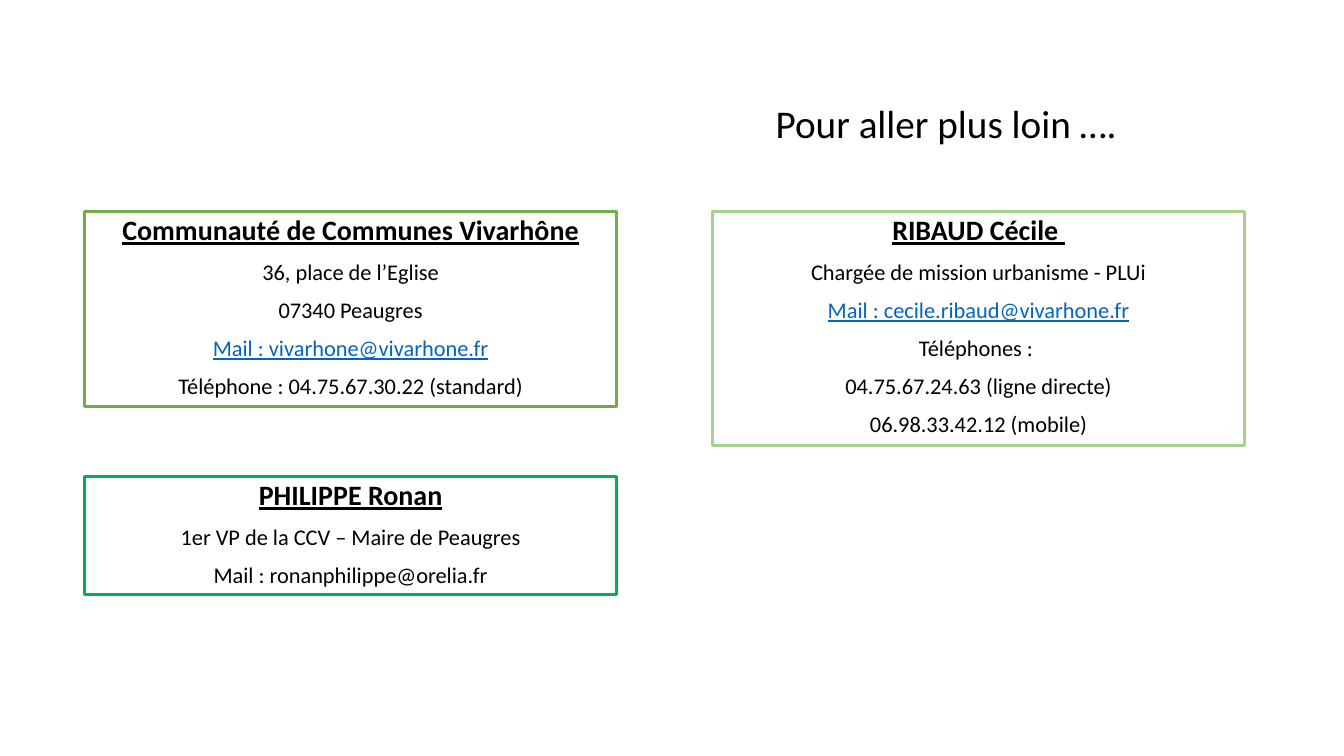
from pptx import Presentation
from pptx.dml.color import RGBColor
from pptx.enum.shapes import MSO_SHAPE
from pptx.enum.text import MSO_ANCHOR, PP_ALIGN
from pptx.util import Pt

RECTANGLE = MSO_SHAPE.RECTANGLE
TOP = MSO_ANCHOR.TOP
CENTER = PP_ALIGN.CENTER

FONT = "Calibri"
BLACK, WHITE, LINK_BLUE = "000000", "FFFFFF", "0563C1"
LEFT_COLUMN, RIGHT_COLUMN = 60.5, 509
CARD_WIDTH = 380
FIRST_ROW, SECOND_ROW = 151.2, 340.5

# Left, top, height, border colour, name, details, position of the blue line
CARDS = [
    (RIGHT_COLUMN, FIRST_ROW, 167, "A9D18E", "RIBAUD Cécile ",
     ["Chargée de mission urbanisme - PLUi",
      "Mail : cecile.ribaud@vivarhone.fr",
      "Téléphones : ",
      "04.75.67.24.63 (ligne directe)",
      "06.98.33.42.12 (mobile)"], 1),
    (LEFT_COLUMN, FIRST_ROW, 139.3, "70AD47", "Communauté de Communes Vivarhône",
     ["36, place de l’Eglise",
      "07340 Peaugres",
      "Mail : vivarhone@vivarhone.fr",
      "Téléphone : 04.75.67.30.22 (standard)"], 2),
    (LEFT_COLUMN, SECOND_ROW, 84.3, "00B050", "PHILIPPE Ronan",
     ["1er VP de la CCV – Maire de Peaugres",
      "Mail : ronanphilippe@orelia.fr"], None),
]


def color(value):
    return RGBColor.from_string(value)


def write_line(paragraph, text, size, text_color=BLACK, bold=False, underline=False):
    paragraph.text = text
    paragraph.alignment = CENTER
    paragraph.line_spacing = 0.9
    font = paragraph.font
    font.name, font.size = FONT, Pt(size)
    font.bold, font.underline = bold, underline
    font.color.rgb = color(text_color)


def add_title(slide, text):
    title = slide.shapes.add_textbox(Pt(469), Pt(71.3), Pt(420), Pt(57.6))
    title.text_frame.word_wrap = True
    write_line(title.text_frame.paragraphs[0], text, 28)


def add_contact_card(slide, left, top, height, border, name, details, link_index):
    card = slide.shapes.add_shape(
        RECTANGLE, Pt(left), Pt(top), Pt(CARD_WIDTH), Pt(height))
    card.shadow.inherit = False
    card.fill.solid()
    card.fill.fore_color.rgb = color(WHITE)
    card.line.color.rgb = color(border)
    card.line.width = Pt(2)

    frame = card.text_frame
    frame.word_wrap = True
    frame.vertical_anchor = TOP
    write_line(frame.paragraphs[0], name, 20, bold=True, underline=True)
    for index, detail in enumerate(details):
        is_link = index == link_index
        paragraph = frame.add_paragraph()
        write_line(paragraph, detail, 16, LINK_BLUE if is_link else BLACK,
                   underline=is_link)
        paragraph.space_before = Pt(10)


def main():
    presentation = Presentation()
    presentation.slide_width, presentation.slide_height = Pt(960), Pt(540)
    slide = presentation.slides.add_slide(presentation.slide_layouts[6])
    add_title(slide, "Pour aller plus loin …. ")
    for card in CARDS:
        add_contact_card(slide, *card)
    presentation.save("out.pptx")


if __name__ == "__main__":
    main()
